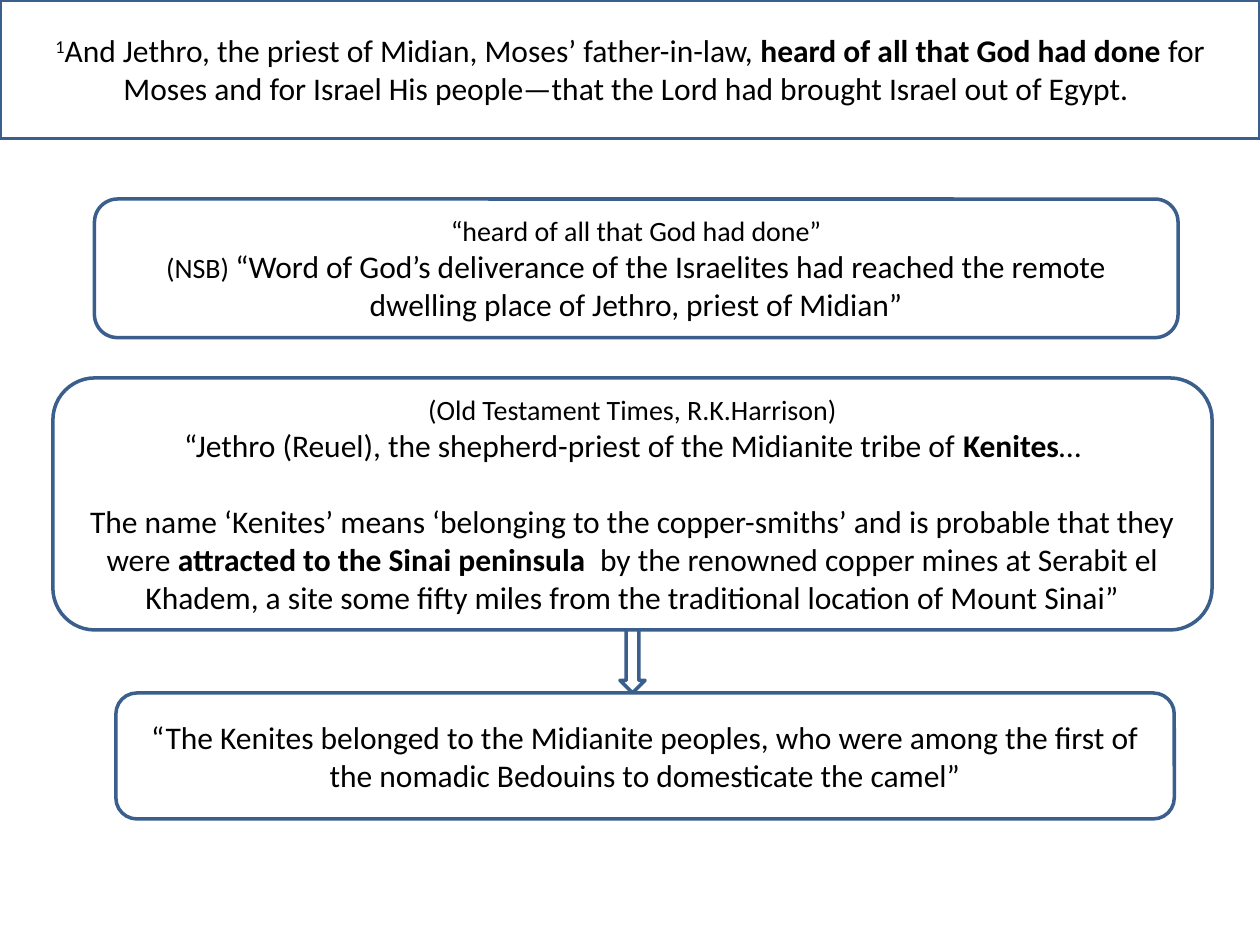
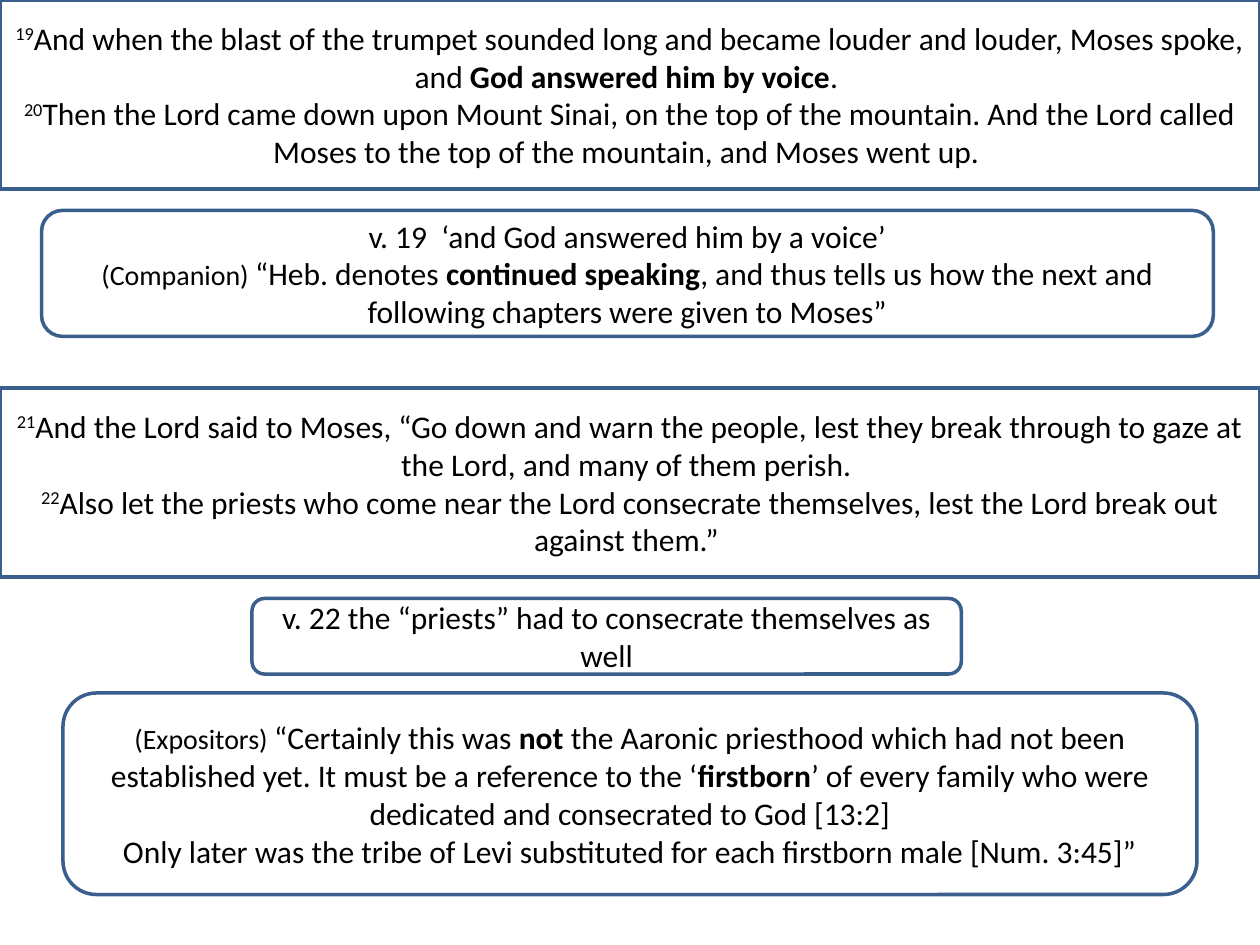
from pptx import Presentation
from pptx.dml.color import RGBColor
from pptx.enum.shapes import MSO_SHAPE
from pptx.enum.text import MSO_ANCHOR, PP_ALIGN
from pptx.util import Inches, Pt

RECT = MSO_SHAPE.RECTANGLE
ROUND = MSO_SHAPE.ROUNDED_RECTANGLE
ARROW = MSO_SHAPE.DOWN_ARROW
MIDDLE = MSO_ANCHOR.MIDDLE
CENTER = PP_ALIGN.CENTER

WHITE = RGBColor(0xFF, 0xFF, 0xFF)
BLACK = RGBColor(0, 0, 0)
BLUE = RGBColor(0x3A, 0x5F, 0x8C)
FONT = "Calibri"
TEXT_SIZE, SOURCE_SIZE = 18, 16
BLANK_LINE = 22
SLIDE_W, SLIDE_H = 10, 7.5

PLAIN, BOLD, SOURCE, VERSE = "plain", "bold", "source", "verse"

JETHRO_VERSE = [
    [("1", VERSE), ("And Jethro, the priest of Midian, Moses’ father-in-law, ", PLAIN),
     ("heard of all that God had done ", BOLD),
     ("for Moses and for Israel His people—that the Lord had brought Israel out of Egypt. ", PLAIN)],
]
HEARD_NOTE = [
    [("“heard of all that God had done”", SOURCE)],
    [("(NSB) ", SOURCE),
     ("“Word of God’s deliverance of the Israelites had reached the remote dwelling place "
      "of Jethro, priest of Midian”", PLAIN)],
]
KENITES_NOTE = [
    [("(Old Testament Times, R.K.Harrison)", SOURCE)],
    [("“Jethro (Reuel), the shepherd-priest of the Midianite tribe of ", PLAIN),
     ("Kenites", BOLD), ("…", PLAIN)],
    [("The name ‘Kenites’ means ‘belonging to the copper-smiths’ and is probable that they were ", PLAIN),
     ("attracted to the Sinai peninsula  ", BOLD),
     ("by the renowned copper mines at Serabit el Khadem, a site some fifty miles from "
      "the traditional location of Mount Sinai”", PLAIN)],
]
CAMEL_NOTE = [
    [("“The Kenites belonged to the Midianite peoples, who were among the first of the "
      "nomadic Bedouins to domesticate the camel”", PLAIN)],
]
TRUMPET_VERSES = [
    [("19", VERSE),
     ("And when the blast of the trumpet sounded long and became louder and louder, Moses spoke, and ", PLAIN),
     ("God answered him by voice", BOLD), (". ", PLAIN)],
    [("20", VERSE),
     ("Then the Lord came down upon Mount Sinai, on the top of the mountain. And the Lord "
      "called Moses to the top of the mountain, and Moses went up. ", PLAIN)],
]
VOICE_NOTE = [
    [("v. 19  ‘and God answered him by a voice’", PLAIN)],
    [("(Companion) ", SOURCE), ("“Heb. denotes ", PLAIN), ("continued speaking", BOLD),
     (", and thus tells us how the next and following chapters were given to Moses”", PLAIN)],
]
WARNING_VERSES = [
    [("21", VERSE),
     ("And the Lord said to Moses, “Go down and warn the people, lest they break through "
      "to gaze at the Lord, and many of them perish. ", PLAIN)],
    [("22", VERSE),
     ("Also let the priests who come near the Lord consecrate themselves, lest the Lord "
      "break out against them.” ", PLAIN)],
]
PRIESTS_NOTE = [[("v. 22 the “priests” had to consecrate themselves as well", PLAIN)]]
FIRSTBORN_NOTE = [
    [("(Expositors) ", SOURCE), ("“Certainly this was ", PLAIN), ("not ", BOLD),
     ("the Aaronic priesthood which had not been established yet. It must be a reference to the ‘", PLAIN),
     ("firstborn", BOLD),
     ("’ of every family who were dedicated and consecrated to God [13:2]", PLAIN)],
    [("Only later was the tribe of Levi substituted for each firstborn male [Num. 3:45]”", PLAIN)],
]

SLIDES = [
    [
        (ROUND, (0.42, 3, 9.2, 2), KENITES_NOTE, {"gap_before": 2}),
        (ARROW, (4.92, 5, 0.2, 0.5), [], {}),
        (ROUND, (0.92, 5.5, 8.4, 1), CAMEL_NOTE, {}),
        (ROUND, (0.75, 1.58, 8.6, 1.1), HEARD_NOTE, {}),
        (RECT, (0, 0, SLIDE_W, 1.1), JETHRO_VERSE, {}),
    ],
    [
        (RECT, (0, 0, SLIDE_W, 1.5), TRUMPET_VERSES, {}),
        (RECT, (0, 3.08, SLIDE_W, 1.5), WARNING_VERSES, {}),
        (ROUND, (0.33, 1.67, 9.3, 1), VOICE_NOTE, {}),
        (ROUND, (2, 4.75, 5.63, 0.6), PRIESTS_NOTE, {}),
        (ROUND, (0.5, 5.5, 9, 1.6), FIRSTBORN_NOTE, {}),
    ],
]


def write_text(tf, paragraphs, gap_before=None):
    tf.word_wrap = True
    tf.vertical_anchor = MIDDLE
    for i, runs in enumerate(paragraphs):
        p = tf.add_paragraph() if i else tf.paragraphs[0]
        p.alignment = CENTER
        if i == gap_before:
            p.space_before = Pt(BLANK_LINE)
        for text, style in runs:
            r = p.add_run()
            r.text = text
            r.font.name = FONT
            r.font.size = Pt(SOURCE_SIZE if style == SOURCE else TEXT_SIZE)
            r.font.bold = style == BOLD
            r.font.color.rgb = BLACK
            if style == VERSE:
                r._r.get_or_add_rPr().set("baseline", "30000")


def add_outlined(s, kind, box, paragraphs, **text_format):
    sp = s.shapes.add_shape(kind, *map(Inches, box))
    sp.shadow.inherit = False
    sp.fill.solid()
    sp.fill.fore_color.rgb = WHITE
    sp.line.color.rgb = BLUE
    sp.line.width = Pt(2)
    write_text(sp.text_frame, paragraphs, **text_format)


def main():
    prs = Presentation()
    prs.slide_width, prs.slide_height = Inches(SLIDE_W), Inches(SLIDE_H)
    for parts in SLIDES:
        s = prs.slides.add_slide(prs.slide_layouts[6])
        for kind, box, paragraphs, text_format in parts:
            add_outlined(s, kind, box, paragraphs, **text_format)
    prs.save("out.pptx")


if __name__ == "__main__":
    main()
